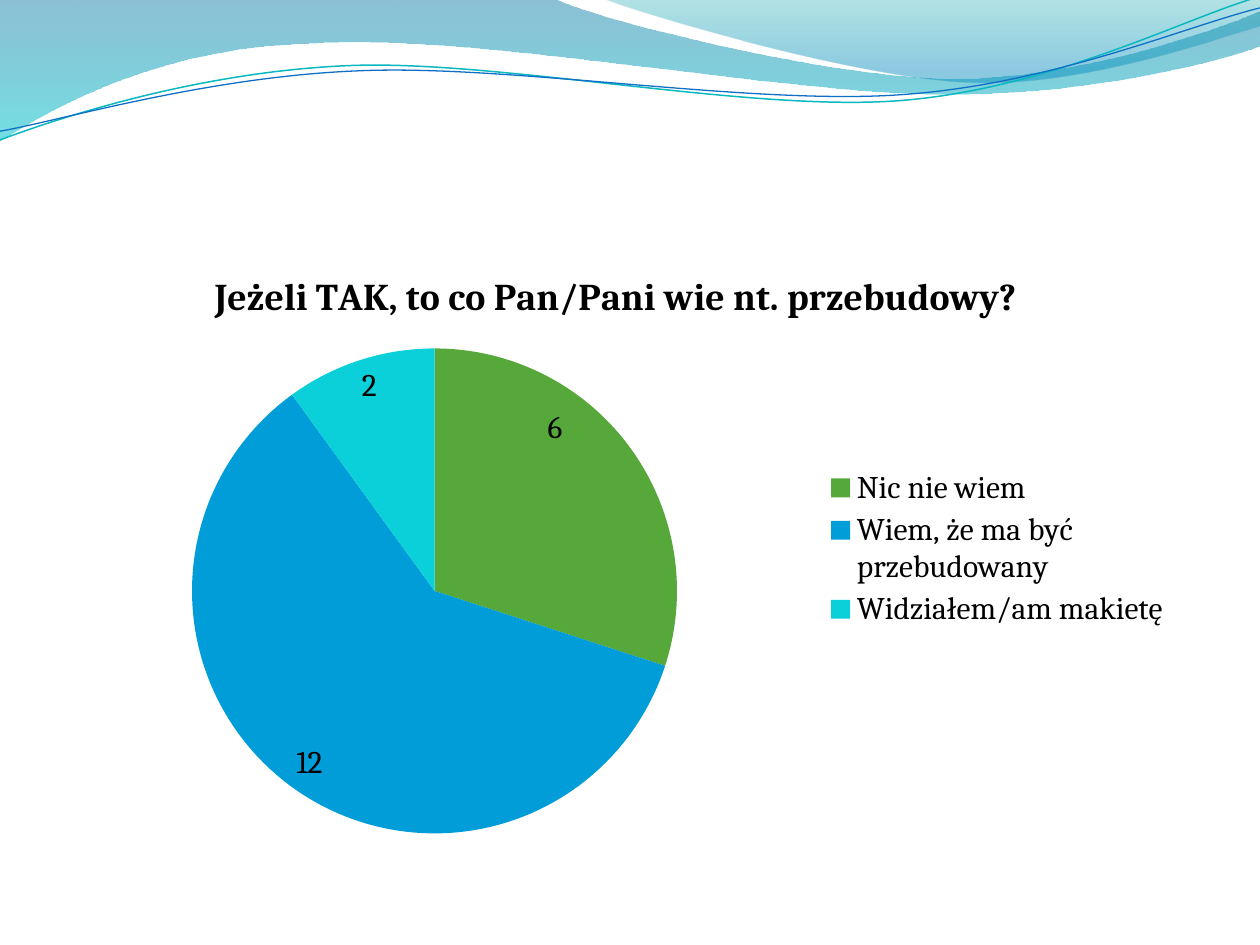
from lxml import etree
from pptx import Presentation
from pptx import util as u
from pptx.chart import data
from pptx.dml.color import RGBColor
from pptx.enum import chart as ch
from pptx.oxml import ns

HUES = {"ink": "000000", "deep": "0074A1", "aqua": "00C6CF", "teal": "00A1A9",
        "sea": "008BBF", "mint": "0AB8BF", "navy": "0F6FC6",
        "green": "55A839", "blue": "009DD9", "cyan": "0BD0D9"}
FACE = "Cambria"


class Deck:
    """Holds the style and the current slide, and draws each kind of element."""

    def __init__(self):
        self.prs = Presentation()
        self.prs.slide_width, self.prs.slide_height = u.Pt(720), u.Pt(540)
        self.slide = self.prs.slides.add_slide(self.prs.slide_layouts[6])

    def hue(self, name):
        return RGBColor.from_string(HUES[name])

    def font(self, font, size, bold=False):
        font.name, font.size, font.bold = FACE, u.Pt(size), bold
        font.color.rgb = self.hue("ink")

    def curve(self, shapes, start, parts, closed=False):
        pen = shapes.build_freeform(u.Pt(start[0]), u.Pt(start[1]))
        for part in parts:
            dots = zip(part[::2], part[1::2])
            pen.add_line_segments([(u.Pt(x), u.Pt(y)) for x, y in dots], close=False)
        if closed:
            pen.add_line_segments([], close=True)
        shape = pen.convert_to_shape()
        shape.shadow.inherit = False
        lines = iter(list(shape._element.iter(ns.qn("a:lnTo"))))
        for part in parts:
            group = [next(lines) for _ in part[::2]]
            if len(group) == 3:
                bend = etree.Element(ns.qn("a:cubicBezTo"))
                group[0].addprevious(bend)
                for line in group:
                    bend.append(line[0])
                    line.getparent().remove(line)
        return shape

    def wave(self, start, parts, stops):
        shape = self.curve(self.slide.shapes, start, parts, True)
        shape.line.fill.background()
        shape.fill.gradient()
        shape.fill.gradient_angle = 270
        for stop, (place, name, _) in zip(shape.fill.gradient_stops, stops):
            stop.position = place
            stop.color.rgb = self.hue(name)
        for tint, (_, _, alpha) in zip(shape._element.spPr.iter(ns.qn("a:srgbClr")), stops):
            etree.SubElement(tint, ns.qn("a:alpha")).set("val", str(alpha * 1000))

    def lines(self, rows):
        group = self.slide.shapes.add_group_shape()
        for start, parts, name, width in rows:
            shape = self.curve(group.shapes, start, parts)
            shape.rotation = 357.3
            shape.fill.background()
            shape.line.color.rgb = self.hue(name)
            shape.line.width = u.Pt(width)

    def place(self, node, index, fixed=True, **spots):
        for old in node.findall(ns.qn("c:layout")):
            node.remove(old)
        layout = etree.Element(ns.qn("c:layout"))
        box = etree.SubElement(layout, ns.qn("c:manualLayout"))
        if index == 0:
            etree.SubElement(box, ns.qn("c:layoutTarget")).set("val", "inner")
        if fixed:
            for key in ("x", "y"):
                etree.SubElement(box, ns.qn(f"c:{key}Mode")).set("val", "edge")
        for key, val in spots.items():
            etree.SubElement(box, ns.qn(f"c:{key}")).set("val", str(val))
        node.insert(index, layout)

    def pie(self, box, title, slices):
        info = data.CategoryChartData()
        info.categories = [name for name, _, _ in slices]
        info.add_series(title, [val for _, val, _ in slices])
        chart = self.slide.shapes.add_chart(
            ch.XL_CHART_TYPE.PIE, *map(u.Pt, box), info).chart
        self.font(chart.font, 18)
        chart.has_title = True
        chart.chart_title.include_in_layout = False
        frame = chart.chart_title.text_frame
        frame.text = title
        self.font(frame.paragraphs[0].runs[0].font, 21.6, True)
        chart.has_legend = True
        chart.legend.position = ch.XL_LEGEND_POSITION.RIGHT
        chart.legend.include_in_layout = False
        self.font(chart.legend.font, 18)
        plot = chart.plots[0]
        plot.vary_by_categories = True
        row = plot.series[0]
        tags = row.data_labels
        tags.show_value, tags.show_percentage = True, False
        tags.position = ch.XL_LABEL_POSITION.INSIDE_END
        self.font(tags.font, 18)
        first = row.points[0].data_label
        self.font(first.font, 18)
        first.position = ch.XL_LABEL_POSITION.INSIDE_END
        for index, (_, _, name) in enumerate(slices):
            wedge = row.points[index].format
            wedge.fill.solid()
            wedge.fill.fore_color.rgb = self.hue(name)
            wedge.line.fill.background()
        root = chart._chartSpace.chart
        self.place(root.plotArea, 0, x=0.126, y=0.17, w=0.428, h=0.802)
        self.place(chart.chart_title._element, 1, x=0.14, y=0.032)
        self.place(chart.legend._element, 1, x=0.681, y=0.361, w=0.31, h=0.28)
        self.place(row._element.find(".//" + ns.qn("c:dLbl")), 1, False, x=-0.055, y=-0.071)


def main():
    deck = Deck()
    deck.wave((0, 0), [
        (317, -0.7), (343, 12, 478, 45, 546, 45), (614, 45, 690, 19, 720, 6.5),
        (721, 26), (708, 32, 626, 55, 537, 54), (448, 54, 275, 20, 185, 24.5),
        (93, 26, 33, 60, -0.7, 81), (0, 0)], [(0, "deep", 45), (1, "aqua", 55)])
    deck.wave((345, -0.7), [
        (366, 8, 491, 45, 554, 47), (616, 50, 692, 23, 720, 15), (720, 0),
        (345, -0.7)], [(0, "teal", 30), (0.8, "sea", 45)])
    deck.lines([
        ((-1.4, 63), [
            (33.7, 51.7, 114.3, 29.4, 199.9, 30), (284.9, 30.5, 425.8, 67.2, 512.5, 64.8),
            (599.2, 62.3, 676.6, 25.9, 720.1, 15.4)], "mint", 0.85),
        ((-1.1, 58), [
            (33.2, 53.7, 118.2, 32.6, 204.3, 33.2), (290.4, 33.2, 429.1, 63.8, 515.3, 61.4),
            (601.4, 59.4, 678.4, 30, 721.4, 21.5)], "navy", 0.75)])
    deck.pie((28, 140.4, 648, 345.6), "Jeżeli TAK, to co Pan/Pani wie nt. przebudowy?", [
        ("Nic nie wiem", 6, "green"),
        ("Wiem, że ma być przebudowany", 12, "blue"),
        ("Widziałem/am makietę", 2, "cyan")])
    deck.prs.save("out.pptx")


if __name__ == "__main__":
    main()
